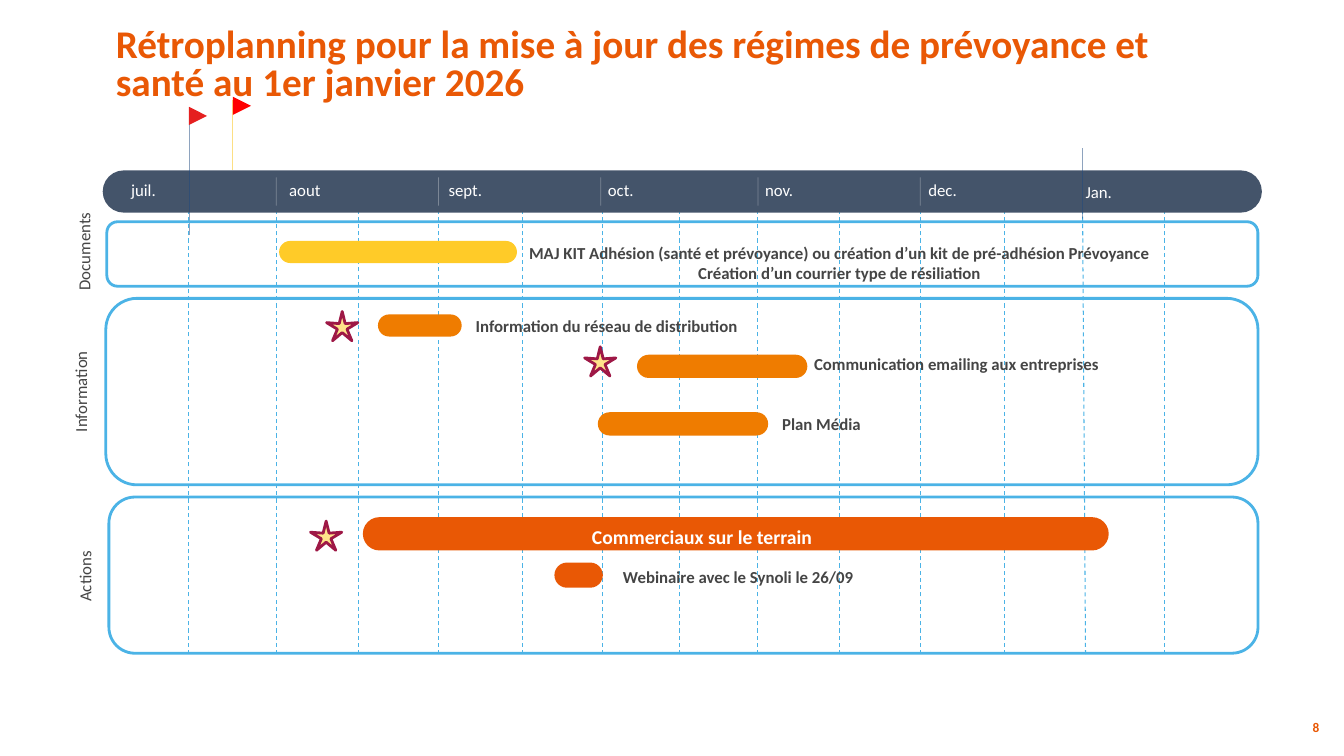
from lxml import etree
from pptx import Presentation
from pptx.dml.color import RGBColor
from pptx.enum.dml import MSO_LINE
from pptx.enum.shapes import MSO_CONNECTOR, MSO_SHAPE
from pptx.enum.text import MSO_ANCHOR, PP_ALIGN
from pptx.oxml.ns import qn
from pptx.util import Pt

ROUND, STAR, FLAG = MSO_SHAPE.ROUNDED_RECTANGLE, MSO_SHAPE.STAR_5_POINT, MSO_SHAPE.FLOWCHART_MERGE
STRAIGHT, DASH = MSO_CONNECTOR.STRAIGHT, MSO_LINE.DASH
LEFT, MID, RIGHT = PP_ALIGN.LEFT, PP_ALIGN.CENTER, PP_ALIGN.RIGHT
TOP, CENTER = MSO_ANCHOR.TOP, MSO_ANCHOR.MIDDLE

COLORS = {
    "rust": "E95805", "orange": "EF7C00", "yellow": "FFCB28",
    "navy": "44546A", "blue": "4BB3E6", "mast": "1F497E", "pole": "FCDF84",
    "red": "FF0000", "brick": "E52020", "star": "FFE38A", "plum": "9E1846",
    "gray": "454545", "white": "FFFFFF",
}
MONTHS = [("juil.", 93.6), ("aout", 206.6), ("sept.", 320.4), ("oct.", 434.2),
          ("nov.", 546.5), ("dec.", 663.1), ("Jan.", 775.4)]
GRID = [134.6, 197.3, 256.3, 313.2, 373, 430.6, 485.3, 541.4, 599.8, 657.4, 717.8, 775.4, 831.6]
TICKS = [197.3, 313.2, 429.1, 541.4, 657.4]
PANELS = [("Documents", 76.3, 158.4, 822.2, 46.1, 49, 144.7, 69.8),
          ("Information", 75.6, 213.1, 823, 133.2, 46.8, 232.6, 94.3),
          ("Actions", 77.8, 355, 820.8, 111.6, 49.7, 356.4, 110.9)]
TASKS = [(199.4, 172.1, 169.9, 15.8, "yellow"), (270, 224.6, 59.8, 15.8, "orange"),
         (455, 253.4, 121.7, 16.6, "orange"), (427, 294.5, 121.7, 16.6, "orange"),
         (259.2, 369.4, 532.8, 23.8, "rust"), (396, 401.8, 34.6, 18, "rust")]
STARS = [(233.3, 222.5), (417.6, 247.7), (221.8, 372.2)]
NOTES = [
    ("MAJ KIT Adhésion (santé et prévoyance) ou création d’un kit de pré-adhésion Prévoyance\n"
     "Création d’un courrier type de résiliation", 365, 173.5, 469.4, 28.8, MID),
    ("Information du réseau de distribution", 339.8, 225.4, 219.6, 14.4, LEFT),
    ("Communication emailing aux entreprises", 569.5, 252.7, 227.5, 14.4, MID),
    ("Plan Média", 558.7, 295.2, 369.4, 14.4, LEFT),
    ("Webinaire avec le Synoli le 26/09", 445, 404.6, 185, 14.4, LEFT),
]


def rgb(name):
    return RGBColor.from_string(COLORS[name])


def form(slide, kind, x, y, w, h, adj=None, turn=0, fill=None, line=None):
    shape = slide.shapes.add_shape(kind, Pt(x), Pt(y), Pt(w), Pt(h))
    if adj is not None:
        shape.adjustments[0] = adj
    shape.rotation = turn
    shape.shadow.inherit = False
    if fill:
        shape.fill.solid()
        shape.fill.fore_color.rgb = rgb(fill)
    else:
        shape.fill.background()
    if line:
        shape.line.color.rgb = rgb(line)
        shape.line.width = Pt(2)
    else:
        shape.line.fill.background()


def rule(slide, start, end, color, width=0.5, dash=None, alpha=None):
    line = slide.shapes.add_connector(STRAIGHT, *map(Pt, start + end))
    line.line.color.rgb = rgb(color)
    line.line.width = Pt(width)
    if dash:
        line.line.dash_style = dash
    props = line.element.spPr
    if alpha:
        tint = props.find(".//" + qn("a:srgbClr"))
        etree.SubElement(tint, qn("a:alpha")).set("val", str(alpha * 1000))
    etree.SubElement(props, qn("a:effectLst"))


def write(slide, text, x, y, w, h, size=12, color="gray", bold=False,
          align=LEFT, anchor=CENTER, space=None, turned=False):
    box = slide.shapes.add_textbox(Pt(x), Pt(y), Pt(w), Pt(h))
    frame = box.text_frame
    frame.word_wrap = True
    frame.vertical_anchor = anchor
    if turned:
        box.element.txBody.bodyPr.set("vert", "vert270")
    else:
        frame.margin_left = frame.margin_right = frame.margin_top = frame.margin_bottom = 0
    frame.text = text
    for para in frame.paragraphs:
        para.alignment = align
        if space:
            para.line_spacing = space
        for run in para.runs:
            font = run.font
            font.name, font.size, font.bold = "Calibri", Pt(size), bold
            font.color.rgb = rgb(color)


def header(slide):
    write(slide, "Rétroplanning pour la mise à jour des régimes de prévoyance et santé au 1er janvier 2026",
          82.8, 20.5, 765.4, 56.9, size=28, color="rust", bold=True, anchor=TOP, space=0.8)
    write(slide, "8", 915.8, 513.4, 26.6, 26.6, size=9.5, color="rust", bold=True,
          align=RIGHT, anchor=TOP)


def calendar(slide):
    for x in GRID:
        rule(slide, (x, 467.3), (773.3 if x == 775.4 else x, 150.5), "blue", 0.75, DASH)
    form(slide, ROUND, 73.4, 121.7, 828, 30.2, adj=0.5, fill="navy")
    for name, x in MONTHS:
        write(slide, name, x, 129.6 if name == "Jan." else 128.2, 40, 14.4, color="white")
    for x in TICKS:
        rule(slide, (x, 126.7), (x, 146.9), "white", alpha=30)


def flags(slide):
    rule(slide, (135.4, 87.1), (135.4, 167.8), "mast", alpha=50)
    rule(slide, (166.3, 71.3), (166.3, 121.7), "pole", 0.75)
    rule(slide, (773.3, 105.8), (773.3, 156.2), "mast", alpha=50)
    for x, y, color in [(166.3, 69.1, "red"), (134.9, 76.3, "brick")]:
        form(slide, FLAG, x, y, 13, 13, turn=270, fill=color)


def main():
    """Build the planning slide and save it."""
    deck = Presentation()
    deck.slide_width, deck.slide_height = Pt(960), Pt(540)
    slide = deck.slides.add_slide(deck.slide_layouts[6])
    header(slide)
    calendar(slide)
    flags(slide)
    for name, x, y, w, h, left, top, tall in PANELS:
        form(slide, ROUND, x, y, w, h, line="blue")
        write(slide, name, left, top, 28.8, tall, align=MID, anchor=TOP, turned=True)
    for x, y, w, h, color in TASKS:
        form(slide, ROUND, x, y, w, h, adj=0.5, fill=color)
    for x, y in STARS:
        form(slide, STAR, x, y, 22.3, 20.9, adj=0.154, fill="star", line="plum")
    for text, x, y, w, h, align in NOTES:
        write(slide, text, x, y, w, h, bold=True, align=align)
    write(slide, "Commerciaux sur le terrain", 305.3, 374.4, 392.4, 17.3,
          size=14, color="white", bold=True, align=MID)
    deck.save("out.pptx")


if __name__ == "__main__":
    main()
